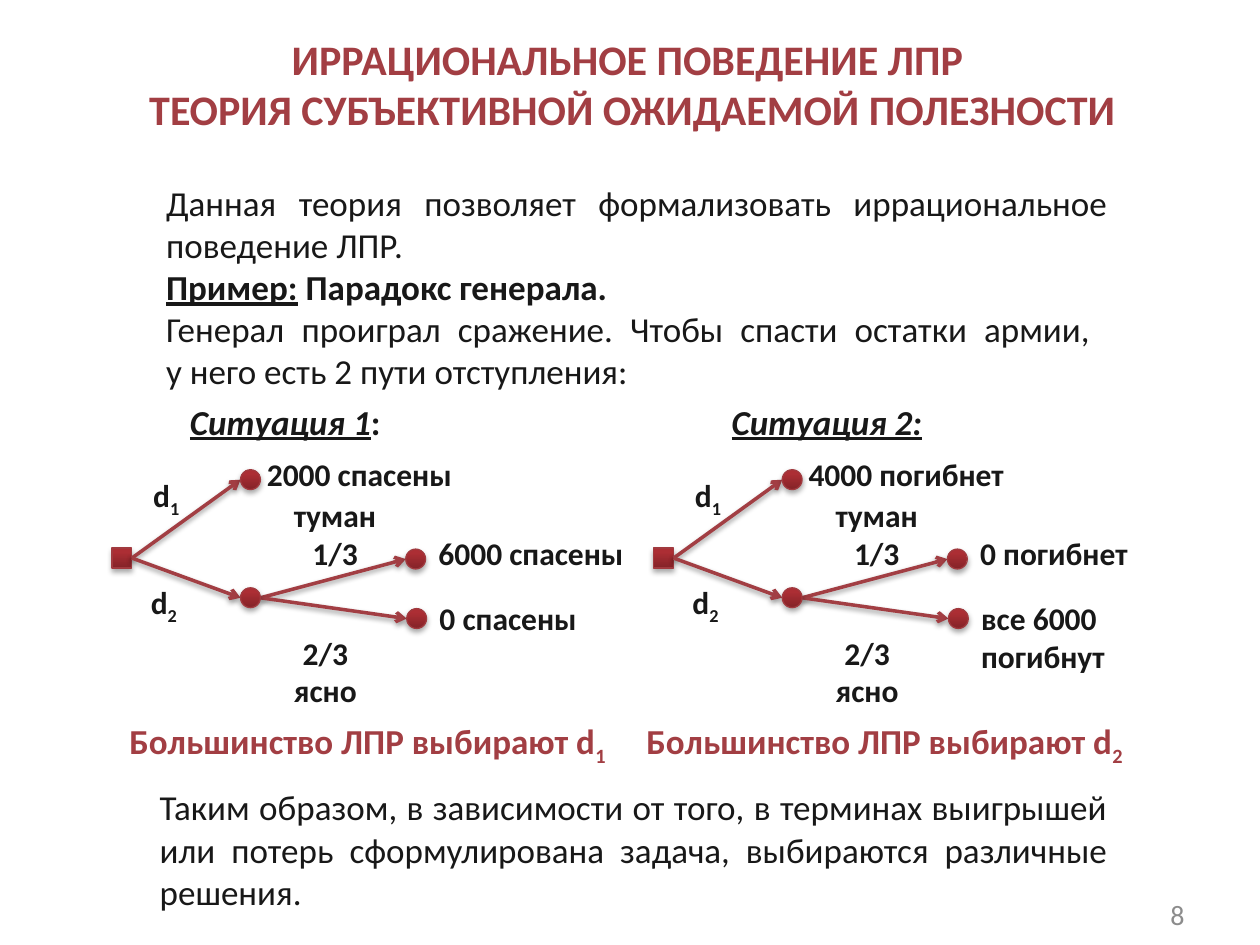
from copy import deepcopy

from lxml.etree import SubElement
from pptx import Presentation
from pptx.dml.color import RGBColor
from pptx.enum.shapes import MSO_CONNECTOR, MSO_SHAPE
from pptx.enum.text import MSO_ANCHOR, PP_ALIGN
from pptx.oxml.ns import qn
from pptx.util import Cm, Pt

COLORS = {"ink": "181818", "red": "A23E43", "edge": "A13A3F", "dark": "842328",
          "light": "AC2E34", "gray": "8C8C8C", "shade": "000000"}
LEFT, MID, RIGHT, FULL = (PP_ALIGN.LEFT, PP_ALIGN.CENTER, PP_ALIGN.RIGHT,
                          PP_ALIGN.JUSTIFY)
NODE = 0.4   # side of a node
STEP = 10.92  # distance between the two trees


def color(name):
    return RGBColor.from_string(COLORS[name])


def shade(shape, dist, alpha):
    """Give a shape or connector a soft shadow straight below it."""
    props = shape._element.spPr
    for old in props.findall(qn("a:effectLst")):
        props.remove(old)
    outer = SubElement(SubElement(props, qn("a:effectLst")), qn("a:outerShdw"),
                       blurRad=str(Pt(3.1)), dist=str(Pt(dist)),
                       dir="5400000", rotWithShape="0")
    tone = SubElement(outer, qn("a:srgbClr"), val=COLORS["shade"])
    SubElement(tone, qn("a:alpha"), val=str(alpha * 1000))


class Board:
    """Holds the style, the slide and the shapes that new items join."""

    font = "Calibri"

    def __init__(self, slide):
        self.slide = slide
        self.shapes = slide.shapes

    def group(self):
        self.shapes = self.slide.shapes.add_group_shape().shapes

    def ungroup(self):
        self.shapes = self.slide.shapes

    def fill(self, frame, paras, size, tint, align):
        """Put text in a frame; a paragraph is a list of (text, marks) with
        marks b bold, i italic, u underline, s subscript."""
        for num, parts in enumerate(paras):
            para = frame.add_paragraph() if num else frame.paragraphs[0]
            para.alignment = align
            para.text = parts[0][0]
            marks = [parts[0][1]] * len(para.runs)
            for text, mark in parts[1:]:
                para.add_run().text = text
                marks.append(mark)
            for run, mark in zip(para.runs, marks):
                font = run.font
                font.name, font.size = self.font, Pt(size)
                font.color.rgb = color(tint)
                font.bold, font.italic = "b" in mark, "i" in mark
                font.underline = "u" in mark
                if "s" in mark:
                    run._r.get_or_add_rPr().set("baseline", "-25000")
            for gap in para._p.findall(qn("a:br")):
                gap.insert(0, deepcopy(para.runs[0]._r.rPr))

    def title(self, box, text):
        shape = self.slide.shapes.title
        shape.left, shape.top, shape.width, shape.height = map(Cm, box)
        frame = shape.text_frame
        frame.vertical_anchor = MSO_ANCHOR.MIDDLE
        self.fill(frame, [[(text, "b")]], 24, "red", MID)
        frame.paragraphs[0].space_after = Pt(6)

    def text(self, box, *paras, size=18, tint="ink", align=LEFT,
             anchor=MSO_ANCHOR.TOP):
        frame = self.shapes.add_textbox(*map(Cm, box)).text_frame
        frame.word_wrap = True
        frame.vertical_anchor = anchor
        self.fill(frame, paras, size, tint, align)

    def node(self, x, y, kind=MSO_SHAPE.OVAL):
        """Add a node by the middle of its left side."""
        shape = self.shapes.add_shape(kind, Cm(x), Cm(y - NODE / 2),
                                      Cm(NODE), Cm(NODE))
        shape.fill.gradient()
        shape.fill.gradient_angle = 90
        stops = shape.fill.gradient_stops
        for stop, place, name in zip(stops, (0, 0.8), ("dark", "light")):
            stop.position = place
            stop.color.rgb = color(name)
        shape.line.color.rgb = color("edge")
        shape.line.width = Pt(0.75)
        shade(shape, 1.8, 35)
        return shape

    def arrow(self, start, end, root=None):
        link = self.shapes.add_connector(MSO_CONNECTOR.STRAIGHT,
                                         *map(Cm, (*start, *end)))
        if root is not None:
            link.begin_connect(root, 3)
        link.line.color.rgb = color("red")
        link.line.width = Pt(2)
        SubElement(link.line._get_or_add_ln(), qn("a:tailEnd"), type="arrow")
        shade(link, 1.6, 38)

    def tree(self, x, head, sure, best, worst):
        """Draw a decision tree with its outcomes, x to the right."""
        self.group()
        self.text((x + 3.58, 7.94, 4.8, 1.12), head, size=20)

        first, second = (x + 4.85, 9.67), (x + 4.85, 12.05)
        good, bad = (x + 8.18, 11.27), (x + 8.2, 12.47)
        base = (x + 2.26, 11.25)
        root = self.node(*base, MSO_SHAPE.RECTANGLE)
        for spot in (first, second):
            self.arrow((base[0] + NODE, base[1]), spot, root)
        for spot in (good, bad):
            self.arrow((second[0] + NODE, second[1]), spot)
        for spot in (first, second, good, bad):
            self.node(*spot)

        for dx, y, wide, label in ((5.13, 9.04, 5.26, sure),
                                   (8.59, 10.64, 4.6, best),
                                   (8.61, 11.96, 3.86, worst)):
            self.text((x + dx, y, wide, 1.02), [(label, "b")])
        for dx, y, mark in ((2.84, 9.47, "1"), (2.79, 11.63, "2")):
            self.text((x + dx, y, 1.5, 1.02), [("d", "b"), (mark, "bs")])
        for y, wide, lines in ((9.88, 2.39, ("туман", "1/3")),
                               (12.65, 2, ("2/3", "ясно"))):
            self.text((x + 5.56, y, wide, 1.8),
                      *[[(line, "b")] for line in lines], align=MID)
        self.ungroup()


def main():
    deck = Presentation()
    deck.slide_width, deck.slide_height = Cm(25.4), Cm(19.05)
    board = Board(deck.slides.add_slide(deck.slide_layouts[5]))

    board.title((-0.2, 0.51, 25.7, 2.36),
                "ИРРАЦИОНАЛЬНОЕ ПОВЕДЕНИЕ ЛПР\v"
                " ТЕОРИЯ СУБЪЕКТИВНОЙ ОЖИДАЕМОЙ ПОЛЕЗНОСТИ")
    board.text((22.71, 17.93, 1.42, 1.02), [("8", "")], size=16, tint="gray",
               align=RIGHT, anchor=MSO_ANCHOR.MIDDLE)
    board.text((3.1, 3.53, 19.48, 4.52),
               [("Данная теория позволяет формализовать иррациональное "
                 "поведение ЛПР.", "")],
               [("Пример:", "bu"), (" Парадокс генерала.", "b")],
               [("Генерал проиграл сражение. Чтобы спасти остатки армии, \v"
                 "у него есть 2 пути отступления:", "")],
               size=20, align=FULL)

    board.tree(0, [("Ситуация 1", "biu"), (":", "b")],
               "2000 спасены", "6000 спасены", "0 спасены")
    board.tree(STEP, [("Ситуация 2:", "biu")],
               "4000 погибнет", "0 погибнет", "все 6000 погибнут")

    for x, mark in ((2.36, "1"), (12.78, "2")):
        board.text((x, 14.38, 10.21, 1.12),
                   [("Большинство ЛПР выбирают d", "b"), (mark, "bs")],
                   size=20, tint="red")
    board.text((2.97, 15.72, 19.61, 2.82),
               [("Таким образом, в зависимости от того, в терминах выигрышей "
                 "или потерь сформулирована задача, выбираются различные "
                 "решения.", "")], size=20, align=FULL)
    deck.save("out.pptx")


if __name__ == "__main__":
    main()
